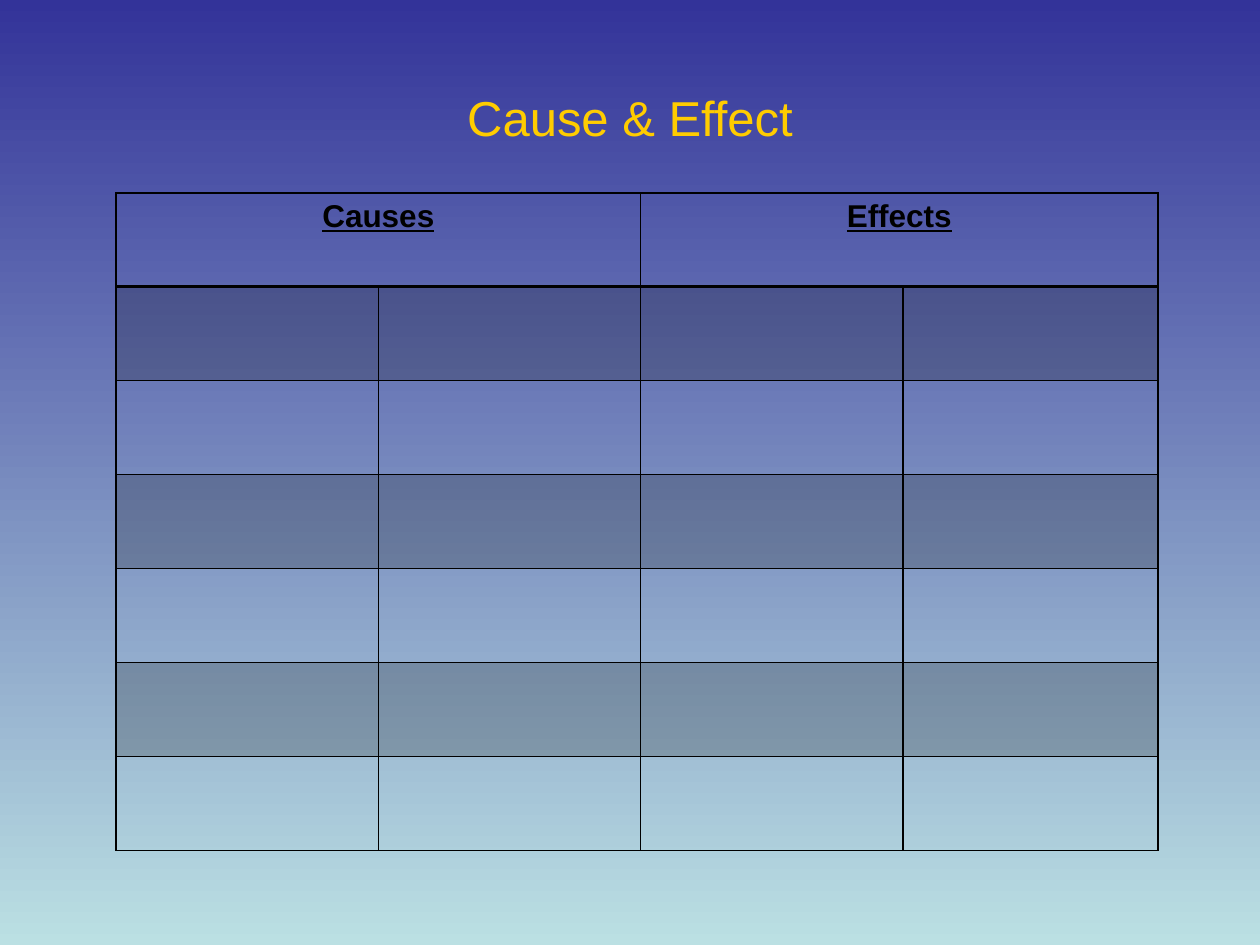
from dataclasses import dataclass

from lxml.etree import SubElement
from pptx import Presentation
from pptx.dml.color import RGBColor as Color
from pptx.enum.text import MSO_ANCHOR as Anchor, PP_ALIGN as Align
from pptx.oxml import parse_xml
from pptx.oxml.ns import nsdecls, qn
from pptx.util import Inches, Pt


@dataclass(frozen=True)
class Theme:
    """Colours, type sizes and line widths of the slide."""
    font: str = "Arial"
    sky_top: str = "333399"
    sky_bottom: str = "BBE0E3"
    title: str = "FFCC00"
    ink: str = "000000"
    title_size: int = 28
    heading_size: int = 18
    band_opacity: int = 20
    rule: int = 1
    heading_rule: int = 2


THEME = Theme()
HEADINGS = ("Causes", "Effects")
COLUMN_WIDTHS = (2.08, 2.08, 2.08, 2.02)
ROW_COUNT = 7


def write(paragraph, text, colour, **formats):
    """Write centred text with the given font values."""
    paragraph.alignment = Align.CENTER
    run = paragraph.add_run()
    run.text = text
    for name, value in {"name": THEME.font, **formats}.items():
        setattr(run.font, name, value)
    run.font.color.rgb = Color.from_string(colour)


def paint_background(slide):
    """Fade the background from top to bottom."""
    fill = slide.background.fill
    fill.gradient()
    fill.gradient_angle = 270
    for stop, colour in zip(fill.gradient_stops, (THEME.sky_top, THEME.sky_bottom)):
        stop.color.rgb = Color.from_string(colour)


def place_title(slide, left, top, width, height):
    """Place the title in its box."""
    title = slide.shapes.title
    box = {"left": left, "top": top, "width": width, "height": height}
    for name, value in box.items():
        setattr(title, name, Inches(value))
    title.text_frame.vertical_anchor = Anchor.MIDDLE
    write(title.text_frame.paragraphs[0], "Cause & Effect", THEME.title,
          size=Pt(THEME.title_size))


def style_cell(cell, row):
    """Shade every second row and rule the cell on all sides."""
    properties = cell._tc.get_or_add_tcPr()
    if row % 2:
        cell.fill.solid()
        cell.fill.fore_color.rgb = Color.from_string(THEME.ink)
        shade = properties.find(".//" + qn("a:srgbClr"))
        SubElement(shade, qn("a:alpha"), val=str(THEME.band_opacity * 1000))
    else:
        cell.fill.background()
    thick_side = {0: "B", 1: "T"}.get(row)
    for index, side in enumerate("LRTB"):
        width = THEME.heading_rule if side == thick_side else THEME.rule
        properties.insert(index, parse_xml(
            f'<a:ln{side} {nsdecls("a")} w="{Pt(width)}"><a:solidFill>'
            f'<a:srgbClr val="{THEME.ink}"/></a:solidFill></a:ln{side}>'))


def place_chart_table(slide, left, top, width, height):
    """Place the cause and effect table in its box."""
    table = slide.shapes.add_table(
        ROW_COUNT, len(COLUMN_WIDTHS),
        *map(Inches, (left, top, width, height))).table
    for flag in ("first_row", "horz_banding"):
        setattr(table, flag, False)
    for column, share in zip(table.columns, COLUMN_WIDTHS):
        column.width = Inches(width * share / sum(COLUMN_WIDTHS))
    for row_index, row in enumerate(table.rows):
        row.height = Inches(height / ROW_COUNT)
        for cell in row.cells:
            style_cell(cell, row_index)
    for index, heading in enumerate(HEADINGS):
        first = table.cell(0, 2 * index)
        first.merge(table.cell(0, 2 * index + 1))
        write(first.text_frame.paragraphs[0], heading, THEME.ink,
              size=Pt(THEME.heading_size), bold=True, underline=True)


def main():
    """Build and save the slide."""
    deck = Presentation()
    deck.slide_width, deck.slide_height = Inches(10), Inches(7.5)
    slide = deck.slides.add_slide(deck.slide_layouts.get_by_name("Title Only"))
    paint_background(slide)
    place_title(slide, 0.5, 0.3, 9, 1.25)
    place_chart_table(slide, 0.92, 1.53, 8.27, 5.22)
    deck.save("out.pptx")


if __name__ == "__main__":
    main()
